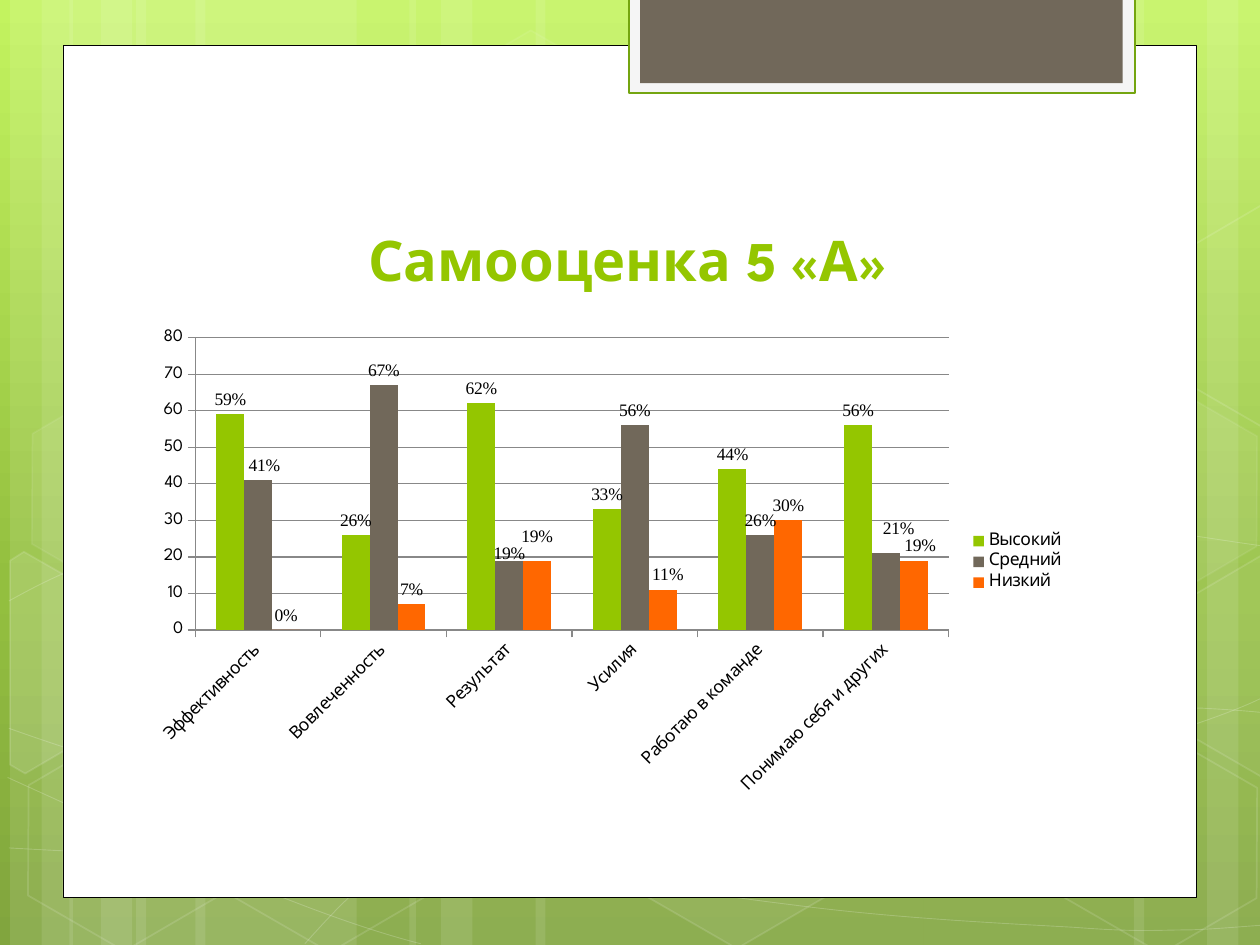
import copy

import pptx
import pptx.chart.data
import pptx.dml.color
import pptx.enum.chart
import pptx.enum.shapes
import pptx.enum.text
import pptx.oxml
import pptx.oxml.ns
import pptx.util
from lxml import etree

Inches, Pt = pptx.util.Inches, pptx.util.Pt
Kind = pptx.enum.shapes.MSO_SHAPE
qn = pptx.oxml.ns.qn

HUES = {"green": "94C600", "brown": "71685A", "orange": "FF6700", "white": "FFFFFF",
        "black": "000000", "pale": "F5F5F5", "edge": "74A510", "grid": "888888"}
SKY = [(0, "C3F35F"), (0.62, "93BF3F"), (1, "81A53E")]
FONT, LABEL = "League Spartan", "Times New Roman"

TITLE = "Самооценка 5 «А»"
CATS = ["Эффективность", "Вовлеченность", "Результат", "Усилия",
        "Работаю в команде", "Понимаю себя и других"]
# name, colour, values, label shifts by point in inches
SERIES = [
    ("Высокий", "green", [59, 26, 62, 33, 44, 56], {}),
    ("Средний", "brown", [41, 67, 19, 56, 26, 21],
     {0: (0.05, 0), 2: (0, 0.06), 5: (0.1, -0.08)}),
    ("Низкий", "orange", [0, 7, 19, 11, 30, 19],
     {2: (0, -0.07), 3: (0.04, 0), 5: (0.05, 0)}),
]
CHART = (1.14, 2.54, 7.41, 3.84)
PLOT = {"x": 0.41, "y": 0.14, "w": 5.98, "h": 2.32}

# left, width
BANDS = [(1.08, 1.75), (0.08, 0.5), (0.33, 0.83), (1.55, 1.75), (0.55, 0.5), (0.8, 0.83),
         (7.33, 1.75), (9.58, 0.5), (9, 0.83), (4.25, 3.08), (3.25, 0.5), (3.5, 0.83)]
# start point, then two handles and an end point for each curve
WAVES = [
    [(0.07, 6.73), (0.61, 6.76), (1.15, 6.79), (1.9, 6.78), (2.65, 6.77), (3.58, 6.75),
     (4.58, 6.65), (5.58, 6.55), (7, 6.36), (7.92, 6.17), (8.83, 5.98), (9.77, 5.68),
     (10.07, 5.51)],
    [(0.07, 4.77), (0.36, 4.61), (0.65, 4.46), (1.21, 4.31), (1.78, 4.16), (2.59, 3.94),
     (3.47, 3.87), (4.36, 3.8), (5.44, 3.79), (6.54, 3.87), (7.64, 3.95), (9.47, 4.26),
     (10.07, 4.34)],
    [(0.06, 6.17), (1.27, 6.72), (2.47, 7.27), (3.34, 7.49)],
    [(0.07, 5.78), (0.38, 5.89), (0.7, 6), (1.28, 6.16), (1.86, 6.31), (2.73, 6.56),
     (3.57, 6.73), (4.4, 6.9), (5.45, 7.08), (6.28, 7.18), (7.11, 7.29), (8, 7.33),
     (8.53, 7.36), (9.05, 7.4), (9.19, 7.38), (9.45, 7.38), (9.71, 7.37), (9.89, 7.35),
     (10.07, 7.34)],
    [(2.42, 7.49), (2.6, 7.29), (2.78, 7.09), (3.02, 6.91), (3.26, 6.73), (3.6, 6.53),
     (3.88, 6.39), (4.16, 6.25), (4.33, 6.19), (4.7, 6.09), (5.06, 5.99), (5.73, 5.85),
     (6.08, 5.78), (6.44, 5.71), (6.49, 5.71), (6.8, 5.69), (7.11, 5.66), (7.6, 5.63),
     (7.94, 5.62), (8.29, 5.61), (8.86, 5.62), (8.86, 5.62), (9.08, 5.62), (9.31, 5.62),
     (9.53, 5.62), (9.71, 5.63), (9.88, 5.64), (10.06, 5.66)],
]
# left, top, fill opacity, line opacity (percent)
HEXES = [(3.34, 0.36, 4, 8), (4.97, 5.89, 6, 12), (0.11, 5.91, 0, 12), (0.14, 3.12, 7, 8),
         (1.74, 5.92, 0, 12), (7.53, 4.53, 10, 12), (8.34, 5.93, 0, 12), (8.34, 3.14, 7, 8)]
# corners, fill opacity: hexagons cut by the slide edge
CUTS = [
    ([(0.08, 4.45), (0.19, 4.38), (0.96, 4.82), (0.95, 5.7), (0.2, 6.14), (0.08, 6.07)], 10),
    ([(9.26, 4.85), (10.01, 4.41), (10.09, 4.46), (10.09, 6.13), (10.02, 6.17),
      (9.26, 5.73)], 4),
    ([(9.26, 2.07), (10.01, 1.63), (10.1, 1.68), (10.09, 3.35), (10.02, 3.39),
      (9.26, 2.95)], 0),
]
# left, top, width, height, fill, line, line width
PANELS = [(0.5, 0.36, 9, 6.76, "white", "black", 0.5),
          (4.99, -0.02, 4.02, 0.76, "pale", "edge", 1.25),
          (5.08, -0.02, 3.83, 0.68, "brown", None, 0)]


def rgb(hue):
    return pptx.dml.color.RGBColor.from_string(HUES[hue])


def tint(fill, hue, alpha):
    """Fill with a colour at an opacity in percent; zero means no fill."""
    if not alpha:
        fill.background()
        return
    fill.solid()
    fill.fore_color.rgb = rgb(hue)
    if alpha < 100:
        node = fill._xPr.find(".//" + qn("a:srgbClr"))
        etree.SubElement(node, qn("a:alpha"), val=str(alpha * 1000))


def paint(shape, hue, alpha=100, line=None, width=0, clear=100):
    shape.shadow.inherit = False
    tint(shape.fill, hue, alpha)
    tint(shape.line.fill, line, clear if line else 0)
    if line:
        shape.line.width = Pt(width)


def box(slide, kind, *spot):
    return slide.shapes.add_shape(kind, *map(Inches, spot))


def trace(slide, dots, close):
    dots = [(Inches(x), Inches(y)) for x, y in dots]
    pen = slide.shapes.build_freeform(*dots[0])
    pen.add_line_segments(dots[1:], close=close)
    return pen.convert_to_shape()


def bend(shape):
    """Turn each three line segments of an outline into one cubic curve."""
    lines = list(shape.element.iter(qn("a:lnTo")))
    for i in range(0, len(lines), 3):
        curve = etree.Element(qn("a:cubicBezTo"))
        lines[i].addprevious(curve)
        for line in lines[i:i + 3]:
            curve.append(line[0])
            line.getparent().remove(line)
    return shape


def place(**spot):
    """Manual chart layout in inches; inner plot area when a size is given."""
    inner = '<c:layoutTarget val="inner"/>' if "w" in spot else ""
    modes = '<c:xMode val="edge"/><c:yMode val="edge"/>' if inner else ""
    size = "".join(f'<c:{k} val="{v / CHART[2 if k in "xw" else 3]}"/>'
                   for k, v in spot.items())
    return pptx.oxml.parse_xml(
        f'<c:layout {pptx.oxml.ns.nsdecls("c")}><c:manualLayout>'
        f'{inner}{modes}{size}</c:manualLayout></c:layout>')


def draw_back(slide):
    fill = slide.background.fill
    fill.gradient()
    fill.gradient_angle = 270
    stops = slide.element.find(".//" + qn("a:gsLst"))
    stops.insert(1, copy.deepcopy(stops[0]))
    for stop, (spot, hue) in zip(fill.gradient_stops, SKY):
        stop.position = spot
        stop.color.rgb = pptx.dml.color.RGBColor.from_string(hue)
    for left, width in BANDS:
        paint(box(slide, Kind.RECTANGLE, left, 0, width, 7.5), "white", 10)
    for dots in WAVES:
        paint(bend(trace(slide, dots, False)), "white", 0, "white", 0.5, 20)
    for left, top, alpha, clear in HEXES:
        cell = box(slide, Kind.HEXAGON, left, top, 1.75, 1.52)
        cell.rotation = 30
        cell.adjustments[0] = 0.285
        paint(cell, "white", alpha, "white", 1, clear)
    for dots, alpha in CUTS:
        paint(trace(slide, dots, True), "white", alpha, "white", 1, 12)
    for *spot, hue, line, width in PANELS:
        paint(box(slide, Kind.RECTANGLE, *spot), hue, 100, line, width)
    for shape in list(slide.shapes):
        if not shape.is_placeholder:
            slide.slide_layout.shapes.element.append(shape.element)


def style(font, name, size, bold, hue):
    font.name, font.size, font.bold = name, Pt(size), bold
    font.color.rgb = rgb(hue)


def add_title(slide):
    title = slide.shapes.title
    title.left, title.top, title.width, title.height = map(Inches, (1.14, 1.12, 7.68, 1.25))
    frame = title.text_frame
    frame.vertical_anchor = pptx.enum.text.MSO_ANCHOR.BOTTOM
    frame.paragraphs[0].alignment = pptx.enum.text.PP_ALIGN.CENTER
    run = frame.paragraphs[0].add_run()
    run.text = TITLE
    style(run.font, FONT, 32, True, "green")


def add_label(row, i, val, shift):
    label = row.points[i].data_label
    run = label.text_frame.paragraphs[0].add_run()
    run.text = f"{val}%"
    style(run.font, LABEL, 10, False, "black")
    label.position = pptx.enum.chart.XL_LABEL_POSITION.OUTSIDE_END
    if shift:
        mark = label._dLbl.find(qn("c:idx"))
        mark.addnext(place(x=shift[0], y=shift[1]))


def add_chart(slide):
    data = pptx.chart.data.CategoryChartData()
    data.categories = CATS
    for name, _, vals, _ in SERIES:
        data.add_series(name, vals)
    chart = slide.shapes.add_chart(pptx.enum.chart.XL_CHART_TYPE.COLUMN_CLUSTERED,
                                   *map(Inches, CHART), data).chart
    chart.has_title = False
    style(chart.font, FONT, 10, False, "black")
    chart.has_legend = True
    chart.legend.position = pptx.enum.chart.XL_LEGEND_POSITION.RIGHT
    chart.legend.include_in_layout = False
    area = chart.element.find(".//" + qn("c:plotArea"))
    for old in area.findall(qn("c:layout")):
        area.remove(old)
    area.insert(0, place(**PLOT))

    plot, across, up = chart.plots[0], chart.category_axis, chart.value_axis
    plot.gap_width, plot.overlap, plot.vary_by_categories = 150, 0, False
    up.minimum_scale, up.maximum_scale, up.major_unit = 0, 80, 10
    across.tick_labels.font.size = Pt(10)
    turn = across._element.find(".//" + qn("a:bodyPr"))
    turn.set("rot", str(-45 * 60000))
    for line in (up.major_gridlines.format.line, up.format.line, across.format.line):
        line.color.rgb = rgb("grid")
        line.width = Pt(0.75)
    for row, (_, hue, vals, shifts) in zip(plot.series, SERIES):
        tint(row.format.fill, hue, 100)
        row.data_labels.show_value = True
        style(row.data_labels.font, LABEL, 10, True, "black")
        for i, val in enumerate(vals):
            add_label(row, i, val, shifts.get(i))
    for lead in area.iter(qn("c:showLeaderLines")):
        lead.set("val", "0")


def main():
    deck = pptx.Presentation()
    deck.slide_width, deck.slide_height = Inches(10), Inches(7.5)
    slide = deck.slides.add_slide(deck.slide_layouts[5])
    draw_back(slide)
    add_title(slide)
    add_chart(slide)
    deck.save("out.pptx")


if __name__ == "__main__":
    main()
